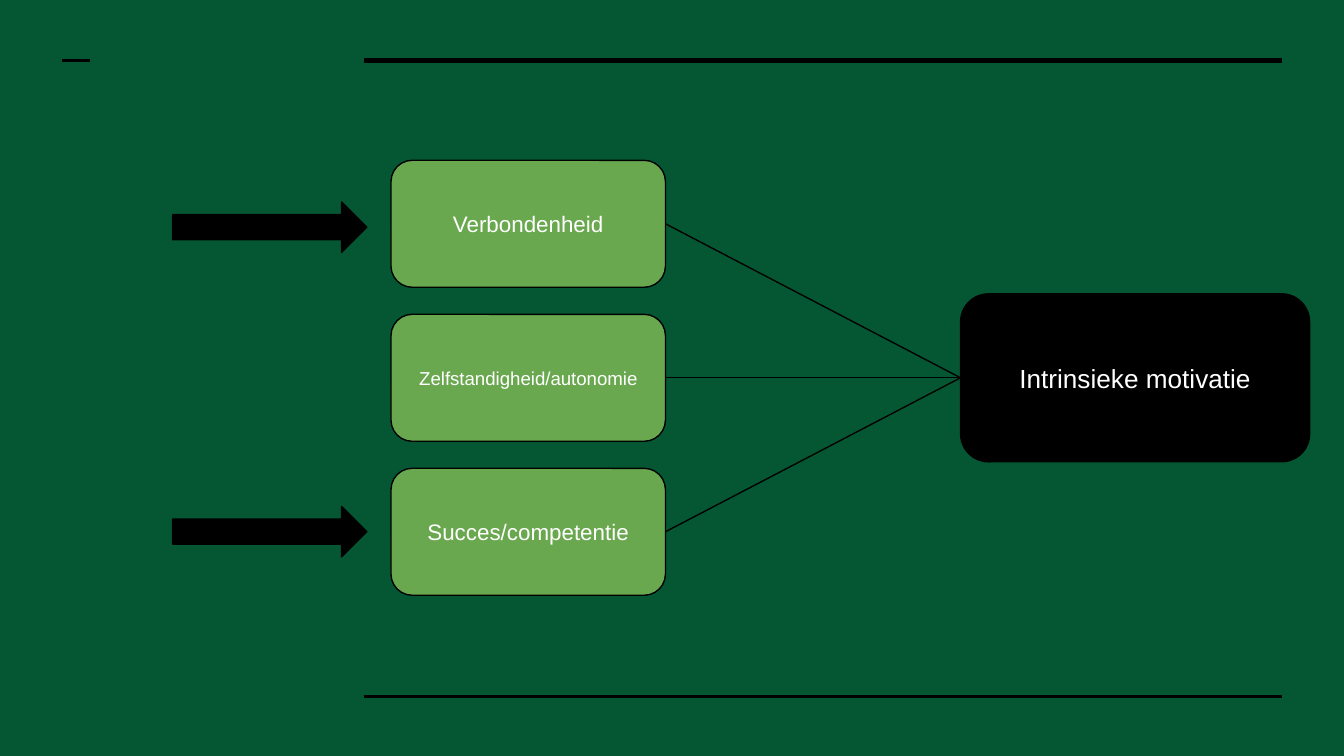
from dataclasses import dataclass

from lxml.etree import SubElement
from pptx import Presentation
from pptx.dml.color import RGBColor
from pptx.enum.shapes import MSO_CONNECTOR as Link, MSO_SHAPE as Preset
from pptx.enum.text import MSO_ANCHOR as Anchor, PP_ALIGN as Align
from pptx.oxml.ns import qn
from pptx.shapes.autoshape import Shape
from pptx.shapes.connector import Connector
from pptx.shapes.shapetree import SlideShapes
from pptx.util import Pt


@dataclass(frozen=True)
class Theme:
    background: RGBColor = RGBColor(0x05, 0x57, 0x34)
    need: RGBColor = RGBColor(0x6A, 0xA8, 0x4F)
    ink: RGBColor = RGBColor(0, 0, 0)
    label: RGBColor = RGBColor(0xFF, 0xFF, 0xFF)
    font: str = "Arial"
    goal_size: float = 14
    need_size: float = 12
    long_need_size: float = 10
    thin: float = 0.75
    medium: float = 1.5
    thick: float = 3


@dataclass(frozen=True)
class Area:
    left: float
    top: float
    width: float
    height: float


@dataclass(frozen=True)
class Need:
    label: str
    size: float


@dataclass(frozen=True)
class Rule:
    start: float
    end: float
    y: float
    weight: float


THEME = Theme()
RULES = (
    Rule(195, 687, 32.5, THEME.thick),
    Rule(195, 687, 373, THEME.medium),
    Rule(33.5, 48, 32.5, THEME.medium),
)
NEEDS = (
    Need("Verbondenheid", THEME.need_size),
    Need("Zelfstandigheid/autonomie", THEME.long_need_size),
    Need("Succes/competentie", THEME.need_size),
)
NEED_AREA = Area(209.5, 85.9, 147, 68)
NEED_STEP = 82.5
GOAL_AREA = Area(514.6, 157.4, 187, 90)
ARROW_TOPS = (108.2, 271.3)
LEFT_SIDE, RIGHT_SIDE = 1, 3


def add_block(shapes: SlideShapes, preset: Preset, area: Area, fill: RGBColor) -> Shape:
    block = shapes.add_shape(
        preset, Pt(area.left), Pt(area.top), Pt(area.width), Pt(area.height)
    )
    block.shadow.inherit = False
    block.fill.solid()
    block.fill.fore_color.rgb = fill
    block.line.color.rgb = THEME.ink
    block.line.width = Pt(THEME.thin)
    return block


def add_card(
    shapes: SlideShapes, area: Area, fill: RGBColor, label: str, size: float
) -> Shape:
    card = add_block(shapes, Preset.ROUNDED_RECTANGLE, area, fill)
    frame = card.text_frame
    frame.word_wrap = True
    frame.vertical_anchor = Anchor.MIDDLE
    frame.margin_left = frame.margin_right = Pt(7.2)
    frame.margin_top = frame.margin_bottom = Pt(7.2)
    paragraph = frame.paragraphs[0]
    paragraph.alignment = Align.CENTER
    run = paragraph.add_run()
    run.text = label
    run.font.name = THEME.font
    run.font.size = Pt(size)
    run.font.color.rgb = THEME.label
    return card


def add_line(shapes: SlideShapes, rule: Rule) -> Connector:
    line = shapes.add_connector(
        Link.STRAIGHT, Pt(rule.start), Pt(rule.y), Pt(rule.end), Pt(rule.y)
    )
    line.line.color.rgb = THEME.ink
    line.line.width = Pt(rule.weight)
    SubElement(line._element.spPr, qn("a:effectLst"))
    return line


def join(shapes: SlideShapes, need: Shape, goal: Shape) -> None:
    """Link the right side of a need to the left side of the goal."""
    link = add_line(shapes, Rule(0, 0, 0, THEME.thin))
    link.begin_connect(need, RIGHT_SIDE)
    link.end_connect(goal, LEFT_SIDE)


def main() -> None:
    deck = Presentation()
    deck.slide_width, deck.slide_height = Pt(720), Pt(405)
    slide = deck.slides.add_slide(deck.slide_layouts[6])
    slide.background.fill.solid()
    slide.background.fill.fore_color.rgb = THEME.background
    shapes = slide.shapes

    for rule in RULES:
        add_line(shapes, rule)

    goal = add_card(
        shapes, GOAL_AREA, THEME.ink, "Intrinsieke motivatie", THEME.goal_size
    )
    need_cards = []
    for row, need in enumerate(NEEDS):
        area = Area(
            NEED_AREA.left,
            NEED_AREA.top + row * NEED_STEP,
            NEED_AREA.width,
            NEED_AREA.height,
        )
        need_cards.append(add_card(shapes, area, THEME.need, need.label, need.size))
    for need_card in need_cards:
        join(shapes, need_card, goal)

    for top in ARROW_TOPS:
        add_block(shapes, Preset.RIGHT_ARROW, Area(92.5, top, 104, 27), THEME.ink)

    deck.save("out.pptx")


if __name__ == "__main__":
    main()
